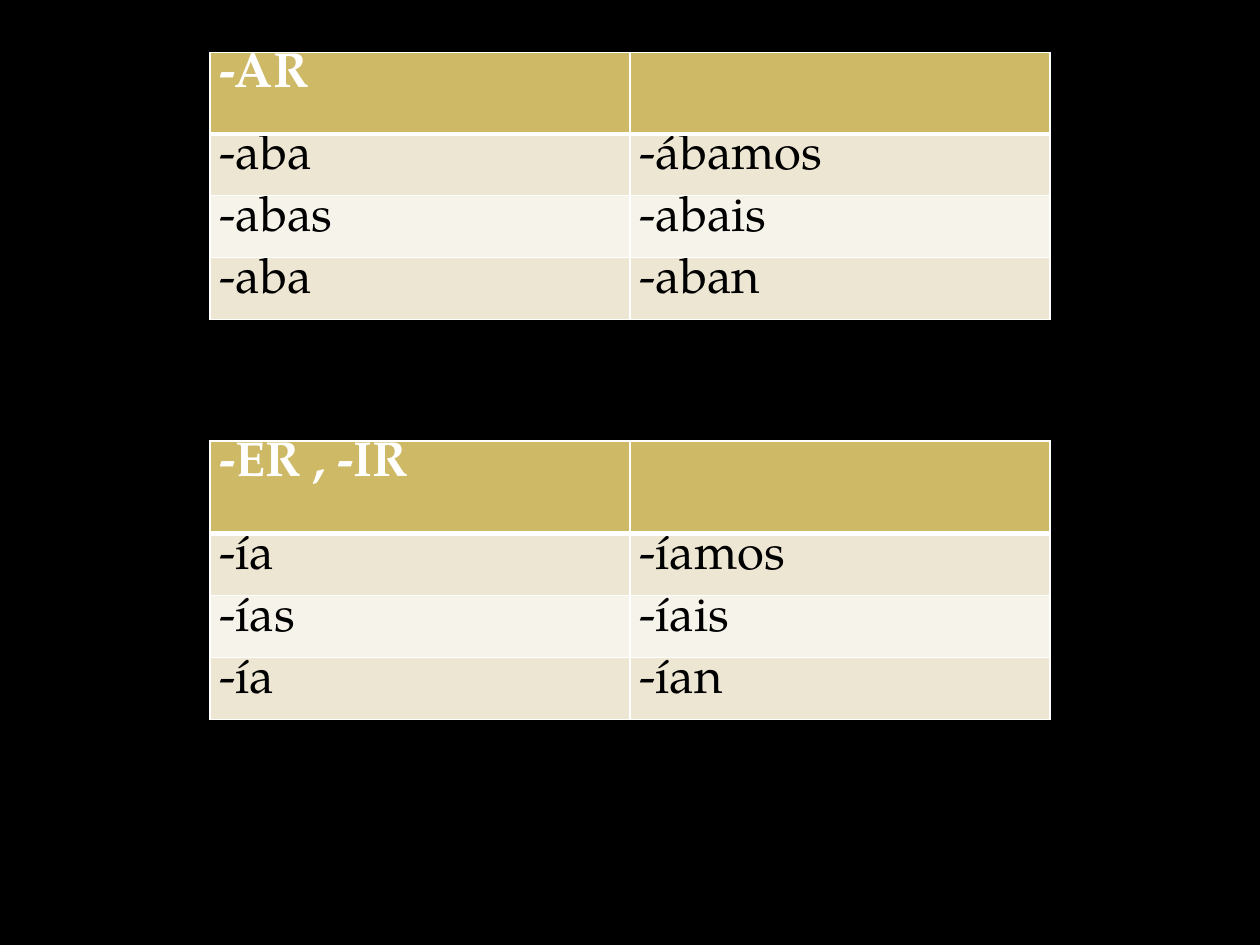
import pptx
import pptx.dml.color
import pptx.oxml.ns
import pptx.util
from lxml import etree

Pt = pptx.util.Pt
RGBColor = pptx.dml.color.RGBColor

BLACK = RGBColor(0x00, 0x00, 0x00)
WHITE = RGBColor(0xFF, 0xFF, 0xFF)
GOLD = RGBColor(0xCE, 0xB9, 0x66)
SAND = RGBColor(0xED, 0xE6, 0xD3)
IVORY = RGBColor(0xF6, 0xF3, 0xEA)

AR_ENDINGS = [("-AR", ""), ("-aba", "-ábamos"), ("-abas", "-abais"), ("-aba", "-aban")]
ER_IR_ENDINGS = [("-ER , -IR", ""), ("-ía", "-íamos"), ("-ías", "-íais"), ("-ía", "-ían")]


def write_text(frame, text, font="TeX Gyre Pagella", size=28, color=BLACK, bold=False):
    para = frame.paragraphs[0]
    if not text:
        para.font.size = Pt(size)
        return
    span = para.add_run()
    span.text = text
    span.font.name = font
    span.font.size = Pt(size)
    span.font.color.rgb = color
    span.font.bold = bold


def add_border(properties, side, width):
    """Append one solid white cell border; the sides must come before the fill."""
    qn = pptx.oxml.ns.qn
    line = etree.SubElement(properties, qn("a:" + side), w=str(Pt(width)))
    fill = etree.SubElement(line, qn("a:solidFill"))
    etree.SubElement(fill, qn("a:srgbClr"), val=str(WHITE))


class EndingsSlide:
    left = 120
    column_width = 240
    row_height = 35.4
    side_margin = 5.4

    def __init__(self, deck):
        self.page = deck.slides.add_slide(deck.slide_layouts[6])
        background = self.page.background.fill
        background.solid()
        background.fore_color.rgb = BLACK

    def table(self, rows, top, header_height):
        heights = [header_height] + [self.row_height] * (len(rows) - 1)
        columns = len(rows[0])
        frame = self.page.shapes.add_table(
            len(rows), columns, Pt(self.left), Pt(top),
            Pt(self.column_width * columns), Pt(sum(heights)))
        table = frame.table
        for column in table.columns:
            column.width = Pt(self.column_width)
        for r, (texts, height) in enumerate(zip(rows, heights)):
            table.rows[r].height = Pt(height)
            for c, text in enumerate(texts):
                self.cell(table.cell(r, c), text, r)

    def cell(self, cell, text, row):
        header = row == 0
        cell.margin_left = cell.margin_right = Pt(self.side_margin)
        cell.margin_top = cell.margin_bottom = Pt(0)
        # The rule under the header is heavier than the grid
        properties = cell._tc.get_or_add_tcPr()
        add_border(properties, "lnL", 1)
        add_border(properties, "lnR", 1)
        add_border(properties, "lnT", 3 if row == 1 else 1)
        add_border(properties, "lnB", 3 if header else 1)
        cell.fill.solid()
        cell.fill.fore_color.rgb = GOLD if header else (IVORY, SAND)[row % 2]
        write_text(cell.text_frame, text, color=WHITE if header else BLACK, bold=header)


def main():
    deck = pptx.Presentation()
    deck.slide_width, deck.slide_height = Pt(720), Pt(540)
    slide = EndingsSlide(deck)

    # Endings of -ar verbs
    slide.table(AR_ENDINGS, top=30, header_height=46.5)
    # Endings of -er and -ir verbs
    slide.table(ER_IR_ENDINGS, top=252, header_height=53)

    deck.save("out.pptx")


if __name__ == "__main__":
    main()
